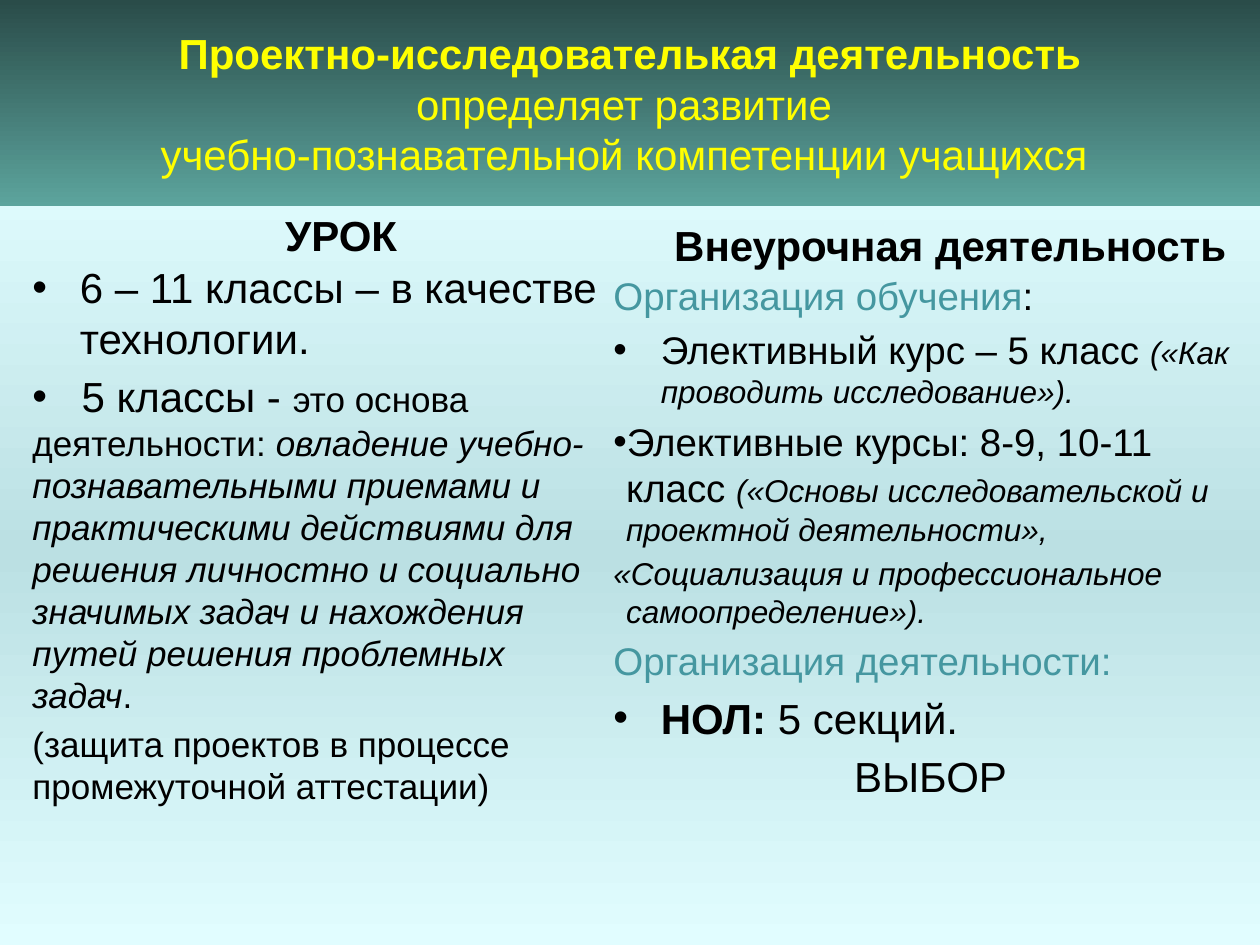
from dataclasses import dataclass

import lxml.etree
import pptx
import pptx.dml.color
import pptx.enum.shapes
import pptx.enum.text
import pptx.oxml.ns
import pptx.util

Pt = pptx.util.Pt
RGBColor = pptx.dml.color.RGBColor
Align = pptx.enum.text.PP_ALIGN
Anchor = pptx.enum.text.MSO_ANCHOR
qn = pptx.oxml.ns.qn

BLACK = RGBColor(0x00, 0x00, 0x00)
YELLOW = RGBColor(0xFF, 0xFF, 0x00)
TEAL = RGBColor(0x45, 0x97, 0xA0)
PALE = RGBColor(0xE1, 0xFD, 0xFF)
AQUA = RGBColor(0xBB, 0xE0, 0xE3)
DARK_GREEN = RGBColor(0x2A, 0x4C, 0x49)
GREEN = RGBColor(0x5C, 0xA4, 0x9D)
FONT = "Arial"
HANGING = 27


@dataclass
class Span:
    text: str
    size: int = 24
    color: RGBColor = BLACK
    bold: bool = False
    italic: bool = False


@dataclass
class Line:
    spans: list
    indent: float = 0
    bullet: bool = False
    align: Align = Align.LEFT
    tab: float = 0


TITLE = [
    Line([Span("Проектно-исследователькая деятельность", color=YELLOW, bold=True)], align=Align.CENTER),
    Line([Span("определяет развитие ", color=YELLOW)], align=Align.CENTER),
    Line([Span("учебно-познавательной компетенции учащихся ", color=YELLOW)], align=Align.CENTER),
]

LESSON = [
    Line([Span("6 – 11 классы – в качестве технологии.")], HANGING, True),
    Line([
        Span("\t5 классы - "),
        Span("это основа деятельности: ", 20),
        Span("овладение учебно-познавательными приемами и практическими действиями для "
             "решения личностно и социально значимых задач и нахождения путей решения "
             "проблемных задач", 20, italic=True),
        Span(".", 20),
    ], bullet=True, tab=28),
    Line([Span("(защита проектов в процессе промежуточной аттестации)", 20)]),
]

EXTRACURRICULAR = [
    Line([Span("Организация обучения", 22, TEAL), Span(":", 22)], HANGING),
    Line([
        Span("Элективный курс – 5 класс ", 22),
        Span("(«Как проводить исследование»).", 18, italic=True),
    ], HANGING, True),
    Line([
        Span("Элективные курсы: 8-9, 10-11 класс ", 22),
        Span("(«Основы исследовательской и проектной деятельности»,", 18, italic=True),
    ], 7.2, True),
    Line([Span("«Социализация и профессиональное самоопределение»).", 18, italic=True)], 7.2),
    Line([Span("Организация деятельности:", 22, TEAL)], HANGING),
    Line([Span("НОЛ:", bold=True), Span(" 5 секций.")], HANGING, True),
    Line([Span("ВЫБОР")], HANGING, align=Align.CENTER),
]


def fill_gradient(shape, colors):
    shape.fill.gradient()
    shape.fill.gradient_angle = 270
    stops = shape._element.spPr.find(".//" + qn("a:gsLst"))
    for stop in list(stops):
        stops.remove(stop)
    for index, color in enumerate(colors):
        position = index * 100000 // (len(colors) - 1)
        stop = lxml.etree.SubElement(stops, qn("a:gs"), pos=str(position))
        lxml.etree.SubElement(stop, qn("a:srgbClr"), val=str(color))


def place(shape, box):
    shape.left, shape.top, shape.width, shape.height = (Pt(length) for length in box)


def format_paragraph(paragraph, line, space_before):
    paragraph.alignment = line.align
    paragraph.space_before = Pt(space_before)
    properties = paragraph._p.get_or_add_pPr()
    properties.set("marL", str(Pt(line.indent)))
    properties.set("indent", str(-Pt(line.indent)))
    if line.bullet:
        lxml.etree.SubElement(properties, qn("a:buFont"), typeface=FONT)
        lxml.etree.SubElement(properties, qn("a:buChar"), char="•")
    else:
        lxml.etree.SubElement(properties, qn("a:buNone"))
    if line.tab:
        tabs = lxml.etree.SubElement(properties, qn("a:tabLst"))
        lxml.etree.SubElement(tabs, qn("a:tab"), pos=str(Pt(line.tab)), algn="l")


def write_lines(text_frame, lines, spacing=0.2):
    for index, line in enumerate(lines):
        paragraph = text_frame.add_paragraph() if index else text_frame.paragraphs[0]
        space_before = spacing * line.spans[0].size if index else 0
        format_paragraph(paragraph, line, space_before)
        for span in line.spans:
            run = paragraph.add_run()
            run.text = span.text
            run.font.name = FONT
            run.font.size = Pt(span.size)
            run.font.bold = span.bold
            run.font.italic = span.italic
            run.font.color.rgb = span.color


def add_background(slide, box):
    shape = slide.shapes.add_shape(
        pptx.enum.shapes.MSO_SHAPE.RECTANGLE, *(Pt(length) for length in box))
    shape.shadow.inherit = False
    shape.line.fill.background()
    fill_gradient(shape, [PALE, AQUA, PALE])


def add_title(slide, box):
    title = slide.shapes.title
    place(title, box)
    fill_gradient(title, [DARK_GREEN, GREEN])
    text_frame = title.text_frame
    text_frame.auto_size = pptx.enum.text.MSO_AUTO_SIZE.NONE
    text_frame.word_wrap = False
    text_frame.vertical_anchor = Anchor.MIDDLE
    write_lines(text_frame, TITLE, spacing=0)
    slide.shapes._spTree.append(title._element)


def add_text(slide, box, lines, anchor=Anchor.TOP):
    text_box = slide.shapes.add_textbox(*(Pt(length) for length in box))
    text_box.text_frame.word_wrap = True
    text_box.text_frame.vertical_anchor = anchor
    write_lines(text_box.text_frame, lines)


def add_column(slide, heading, heading_box, lines, body_box):
    heading_line = Line([Span(heading, bold=True)], align=Align.CENTER)
    add_text(slide, heading_box, [heading_line], Anchor.BOTTOM)
    add_text(slide, body_box, lines)


def main():
    presentation = pptx.Presentation()
    presentation.slide_width = Pt(720)
    presentation.slide_height = Pt(540)
    slide = presentation.slides.add_slide(presentation.slide_layouts[5])
    add_background(slide, (0, 90, 720, 450))
    add_column(slide, "УРОК", (36, 121, 318, 31), LESSON, (11.5, 146, 343, 336))
    add_column(slide, "Внеурочная деятельность", (366, 121, 354, 37),
               EXTRACURRICULAR, (343.5, 152, 376.5, 372))
    add_title(slide, (0, 0, 720, 118))
    presentation.save("out.pptx")


if __name__ == "__main__":
    main()
